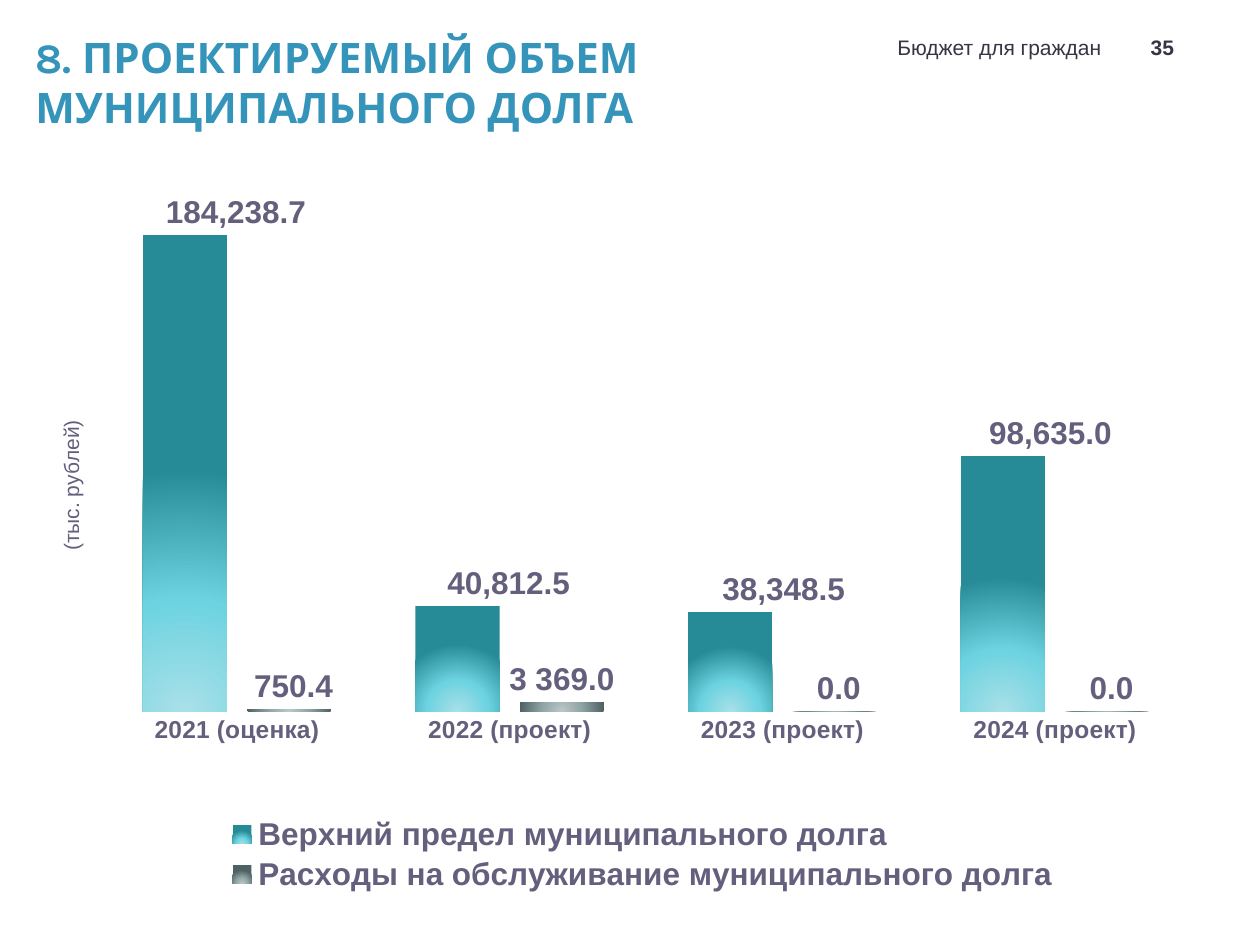
from pptx import Presentation
from pptx import util as u
from pptx.chart import data
from pptx.dml.color import RGBColor
from pptx.enum import chart as ch, text
from pptx.oxml import parse_xml
from pptx.oxml.ns import nsdecls, qn

INK = "373545"
MUTED = "635F7C"
WHITE = "FFFFFF"
YEARS = ["2021 (оценка)", "2022 (проект)", "2023 (проект)", "2024 (проект)"]
# name, values, number format, gradient stops
SERIES = [
    ("Верхний предел муниципального долга", (184238.7, 40812.5, 38348.5, 98635),
     "#,##0.0", ((0, "A9E0E8"), (46, "6DD3E0"), (100, "268B96"))),
    ("Расходы на обслуживание муниципального долга", (750.4, 3369, 0, 0),
     "#\\ ##0.0", ((0, "BCC7C8"), (46, "92A6A8"), (100, "4E6163"))),
]


def rgb(value):
    return RGBColor.from_string(value)


def style_font(font, size, color, bold=False, name="Arial"):
    values = {"size": u.Pt(size), "bold": bold, "name": name}
    for key, value in values.items():
        setattr(font, key, value)
    font.color.rgb = rgb(color)


def add_text(slide, box, words, size, color, bold=False, name="Arial",
             align=text.PP_ALIGN.LEFT, **frame_format):
    frame = slide.shapes.add_textbox(*map(u.Inches, box)).text_frame
    frame.word_wrap = True
    for key, value in frame_format.items():
        setattr(frame, key, value)
    paragraph = frame.paragraphs[0]
    paragraph.alignment = align
    run = paragraph.add_run()
    run.text = words
    style_font(run.font, size, color, bold, name)


def manual_layout(modes=(), **places):
    """Chart layout with the given modes and fractions of the chart area."""
    parts = [f'<c:{tag} val="{value}"/>' for tag, value in (*modes, *places.items())]
    return parse_xml(f'<c:layout {nsdecls("c")}><c:manualLayout>{"".join(parts)}'
                     '</c:manualLayout></c:layout>')


EDGES = (("xMode", "edge"), ("yMode", "edge"))


def set_layout(element, layout, after=None):
    """Replace the layout of a chart part, placed after the named child."""
    for old in element.findall(qn("c:layout")):
        element.remove(old)
    before = element.find(qn(after)) if after else None
    if before is None:
        element.insert(0, layout)
    else:
        before.addnext(layout)


def radial_fill(series, stops):
    colors = "".join(f'<a:gs pos="{pos * 1000}"><a:srgbClr val="{color}"/></a:gs>'
                     for pos, color in stops)
    properties = series.format.fill._xPr
    properties.insert(0, parse_xml(
        f'<a:gradFill {nsdecls("a")} rotWithShape="1"><a:gsLst>{colors}</a:gsLst>'
        '<a:path path="circle"><a:fillToRect l="110000" t="250000" r="110000" '
        'b="40000"/></a:path></a:gradFill>'))


def label_series(series, number_format):
    labels = series.data_labels
    values = {"show_value": True, "number_format": number_format,
              "number_format_is_linked": False,
              "position": ch.XL_LABEL_POSITION.OUTSIDE_END}
    for key, value in values.items():
        setattr(labels, key, value)
    style_font(labels.font, 18, MUTED, True)


def shift_labels(series, number_format, offsets):
    """Move each label of the series to the right of its column."""
    for index, offset in enumerate(offsets):
        label = series.points[index].data_label
        style_font(label.font, 18, MUTED, True)
        label.position = ch.XL_LABEL_POSITION.OUTSIDE_END
    for element, offset in zip(series._element.iter(qn("c:dLbl")), offsets):
        set_layout(element, manual_layout(x=offset, y=0), "c:idx")
        element.find(qn("c:layout")).addnext(parse_xml(
            f'<c:numFmt {nsdecls("c")} formatCode="{number_format}" sourceLinked="0"/>'))


def style_axes(chart):
    years = chart.category_axis
    years.major_tick_mark = years.minor_tick_mark = ch.XL_TICK_MARK.NONE
    style_font(years.tick_labels.font, 14, MUTED, True)
    years.format.line.color.rgb = rgb(WHITE)
    years.format.line.width = u.Pt(1)

    amounts = chart.value_axis
    values = {"minimum_scale": 0, "maximum_scale": 200000, "major_unit": 200000,
              "has_major_gridlines": True, "visible": False}
    for key, value in values.items():
        setattr(amounts, key, value)
    grid = amounts.major_gridlines.format.line
    grid.color.rgb = rgb(WHITE)
    grid.width = u.Pt(0.75)

    # Rotated unit caption
    caption = amounts.axis_title
    frame = caption.text_frame
    frame.text = "(тыс. рублей)"
    style_font(frame.paragraphs[0].runs[0].font, 12, MUTED)
    body = frame._txBody.bodyPr
    body.set("rot", "-5400000")
    body.set("vert", "horz")
    set_layout(caption._element, manual_layout(EDGES, x=0.015, y=0.333), "c:tx")


def add_debt_chart(slide):
    debt = data.CategoryChartData()
    debt.categories = YEARS
    for name, values, number_format, _ in SERIES:
        debt.add_series(name, values, number_format)
    box = map(u.Inches, (0.29, 1.39, 9.43, 5.75))
    chart = slide.shapes.add_chart(
        ch.XL_CHART_TYPE.COLUMN_CLUSTERED, *box, debt).chart
    style_font(chart.font, 10, MUTED)
    chart.has_title = False

    # Columns and their labels
    columns = chart.plots[0]
    for key, value in {"gap_width": 100, "overlap": -24,
                       "vary_by_categories": False}.items():
        setattr(columns, key, value)
    for series, (_, _, number_format, stops) in zip(columns.series, SERIES):
        radial_fill(series, stops)
        label_series(series, number_format)
    shift_labels(columns.series[0], SERIES[0][2], (0.043, 0.043, 0.045, 0.04))

    style_axes(chart)
    inner = (("layoutTarget", "inner"), *EDGES)
    set_layout(chart._chartSpace.chart.plotArea,
               manual_layout(inner, x=0.054, y=0.026, w=0.918, h=0.714))

    # Legend, one entry a line
    chart.has_legend = True
    legend = chart.legend
    legend.position = ch.XL_LEGEND_POSITION.BOTTOM
    legend.include_in_layout = False
    style_font(legend.font, 18, MUTED, True)
    set_layout(legend._element,
               manual_layout(EDGES, x=0.15, y=0.88, w=0.72, h=0.115), "c:legendPos")


def main():
    deck = Presentation()
    deck.slide_width, deck.slide_height = u.Inches(10), u.Inches(7.5)
    slide = deck.slides.add_slide(deck.slide_layouts[6])

    # Header
    bottom = text.MSO_ANCHOR.BOTTOM
    add_text(slide, (8.95, 0.19, 0.55, 0.33), "35", 12, INK, True,
             align=text.PP_ALIGN.CENTER, vertical_anchor=bottom)
    add_text(slide, (0.28, 0.2, 5.51, 0.79),
             "8. ПРОЕКТИРУЕМЫЙ ОБЪЕМ МУНИЦИПАЛЬНОГО ДОЛГА", 24, "3494BA", True,
             "Karla", margin_left=0, margin_right=0)
    add_text(slide, (6.42, 0.19, 2.42, 0.33), "Бюджет для граждан", 12, INK,
             align=text.PP_ALIGN.RIGHT, vertical_anchor=bottom)

    add_debt_chart(slide)
    deck.save("out.pptx")


if __name__ == "__main__":
    main()
